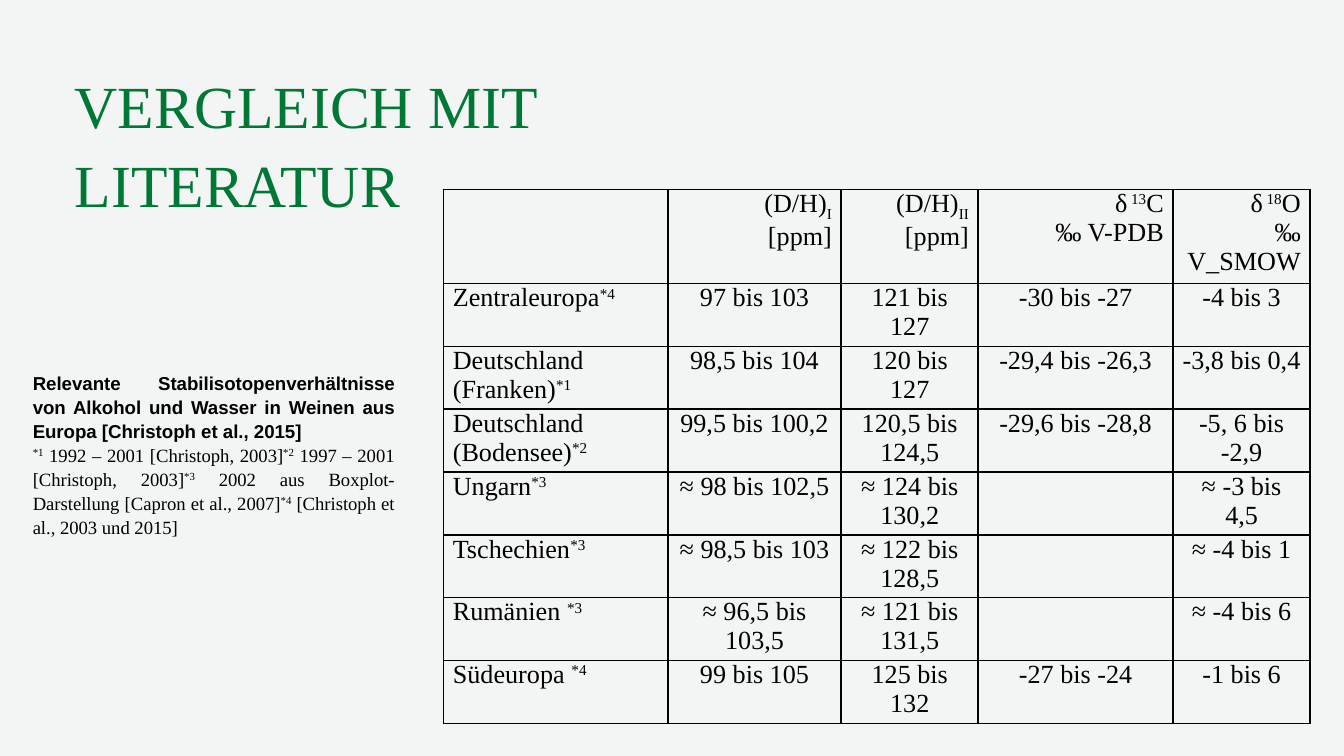
from dataclasses import dataclass

from lxml.etree import SubElement
from pptx import Presentation
from pptx.dml.color import RGBColor
from pptx.enum.text import MSO_ANCHOR, PP_ALIGN
from pptx.oxml.ns import qn
from pptx.util import Pt

SERIF, SANS = "Times New Roman", "Arial"
BLACK, GREEN, BACKGROUND = "000000", "007835", "F3F4F4"
SUPERSCRIPT, SUBSCRIPT = 30, -25


@dataclass(frozen=True)
class Piece:
    text: str
    baseline: int = 0  # percent of the text size


@dataclass(frozen=True)
class Region:
    name: str
    source: str
    ranges: tuple[str, str, str, str]


@dataclass(frozen=True)
class Style:
    font: str
    size: float
    color: str = BLACK
    bold: bool = False


HEADERS = [
    [],
    [[Piece("(D/H)"), Piece("I", SUBSCRIPT)], [Piece("[ppm]")]],
    [[Piece("(D/H)"), Piece("II", SUBSCRIPT)], [Piece("[ppm]")]],
    [[Piece("δ"), Piece(" 13", SUPERSCRIPT), Piece("C")], [Piece("‰ V-PDB")]],
    [[Piece("δ"), Piece(" 18", SUPERSCRIPT), Piece("O")], [Piece("‰ V_SMOW")]],
]
REGIONS = [
    Region("Zentraleuropa", "*4", ("97 bis 103", "121 bis 127", "-30 bis -27", "-4 bis 3")),
    Region("Deutschland (Franken)", "*1",
           ("98,5 bis 104", "120 bis 127", "-29,4 bis -26,3", "-3,8 bis 0,4")),
    Region("Deutschland (Bodensee)", "*2",
           ("99,5 bis 100,2", "120,5 bis 124,5", "-29,6 bis -28,8", "-5, 6 bis -2,9")),
    Region("Ungarn", "*3", ("≈ 98 bis 102,5", "≈ 124 bis 130,2", "", "≈ -3 bis 4,5")),
    Region("Tschechien", "*3", ("≈ 98,5 bis 103", "≈ 122 bis 128,5", "", "≈ -4 bis 1")),
    Region("Rumänien ", "*3", ("≈ 96,5 bis 103,5", "≈ 121 bis 131,5", "", "≈ -4 bis 6")),
    Region("Südeuropa ", "*4", ("99 bis 105", "125 bis 132", "-27 bis -24", "-1 bis 6")),
]
CAPTION = "Relevante Stabilisotopenverhältnisse von Alkohol und Wasser in Weinen aus Europa [Christoph et al., 2015]"
SOURCES = [
    ("*1", " 1992 – 2001 [Christoph, 2003]"),
    ("*2", " 1997 – 2001 [Christoph, 2003]"),
    ("*3", " 2002 aus Boxplot-Darstellung [Capron et al., 2007]"),
    ("*4", " [Christoph et al., 2003 und 2015]"),
]
COLUMN_WIDTHS = [120.2, 92.9, 73.4, 104.4, 73.4]
HEADER_HEIGHT, ROW_HEIGHT = 48.8, 31
TABLE_STYLE = Style(SERIF, 14)


def rgb(color: str) -> RGBColor:
    return RGBColor.from_string(color)


def write(paragraph, pieces: list[Piece], style: Style, align: PP_ALIGN, spacing: float = 1) -> None:
    paragraph.alignment = align
    paragraph.line_spacing = spacing
    for piece in pieces:
        run = paragraph.add_run()
        run.text = piece.text
        run.font.name = style.font
        run.font.size = Pt(style.size)
        run.font.bold = style.bold
        run.font.color.rgb = rgb(style.color)
        if piece.baseline:
            run.font._element.set("baseline", str(piece.baseline * 1000))


def add_text_frame(slide, left: float, top: float, width: float, height: float,
                   anchor: MSO_ANCHOR, bottom_inset: float):
    frame = slide.shapes.add_textbox(Pt(left), Pt(top), Pt(width), Pt(height)).text_frame
    frame.word_wrap = True
    frame.vertical_anchor = anchor
    frame.margin_bottom = Pt(bottom_inset)
    return frame


def outline(cell, color: str, width: float) -> None:
    properties = cell._tc.get_or_add_tcPr()
    for side in ("a:lnL", "a:lnR", "a:lnT", "a:lnB"):
        line = SubElement(properties, qn(side), w=str(Pt(width)))
        SubElement(SubElement(line, qn("a:solidFill")), qn("a:srgbClr"), val=color)


def fill_cell(cell, lines: list[list[Piece]], align: PP_ALIGN) -> None:
    outline(cell, BLACK, 1)
    cell.fill.background()
    cell.margin_left = cell.margin_right = Pt(5)
    cell.margin_top = cell.margin_bottom = 0
    frame = cell.text_frame
    for index, pieces in enumerate(lines):
        paragraph = frame.add_paragraph() if index else frame.paragraphs[0]
        write(paragraph, pieces, TABLE_STYLE, align)


def add_isotope_table(slide, left: float, top: float) -> None:
    row_heights = [HEADER_HEIGHT] + [ROW_HEIGHT] * len(REGIONS)
    table = slide.shapes.add_table(
        len(row_heights), len(COLUMN_WIDTHS), Pt(left), Pt(top),
        Pt(sum(COLUMN_WIDTHS)), Pt(sum(row_heights))).table
    table.first_row = table.horz_banding = False
    for column, width in zip(table.columns, COLUMN_WIDTHS):
        column.width = Pt(width)
    for row, height in zip(table.rows, row_heights):
        row.height = Pt(height)

    for column, lines in enumerate(HEADERS):
        fill_cell(table.cell(0, column), lines, PP_ALIGN.RIGHT)
    for row, region in enumerate(REGIONS, start=1):
        label = [Piece(region.name), Piece(region.source, SUPERSCRIPT)]
        fill_cell(table.cell(row, 0), [label], PP_ALIGN.LEFT)
        for column, value_range in enumerate(region.ranges, start=1):
            lines = [[Piece(value_range)]] if value_range else []
            fill_cell(table.cell(row, column), lines, PP_ALIGN.CENTER)


def main() -> None:
    presentation = Presentation()
    presentation.slide_width, presentation.slide_height = Pt(720), Pt(405)
    slide = presentation.slides.add_slide(presentation.slide_layouts[6])
    slide.background.fill.solid()
    slide.background.fill.fore_color.rgb = rgb(BACKGROUND)

    title = add_text_frame(slide, 33, 72.7, 437, 47.5, MSO_ANCHOR.BOTTOM, 2.5)
    write(title.paragraphs[0], [Piece("VERGLEICH MIT LITERATUR")],
          Style(SERIF, 32, GREEN), PP_ALIGN.LEFT, 1.1)

    add_isotope_table(slide, 237.6, 101.5)

    caption = add_text_frame(slide, 10.5, 197.3, 208, 88.5, MSO_ANCHOR.MIDDLE, 0)
    write(caption.paragraphs[0], [Piece(CAPTION)], Style(SANS, 10, bold=True),
          PP_ALIGN.JUSTIFY, 1.07)
    notes = [piece for mark, source in SOURCES
             for piece in (Piece(mark, SUPERSCRIPT), Piece(source))]
    write(caption.add_paragraph(), notes, Style(SERIF, 10), PP_ALIGN.JUSTIFY, 1.07)

    presentation.save("out.pptx")


if __name__ == "__main__":
    main()
